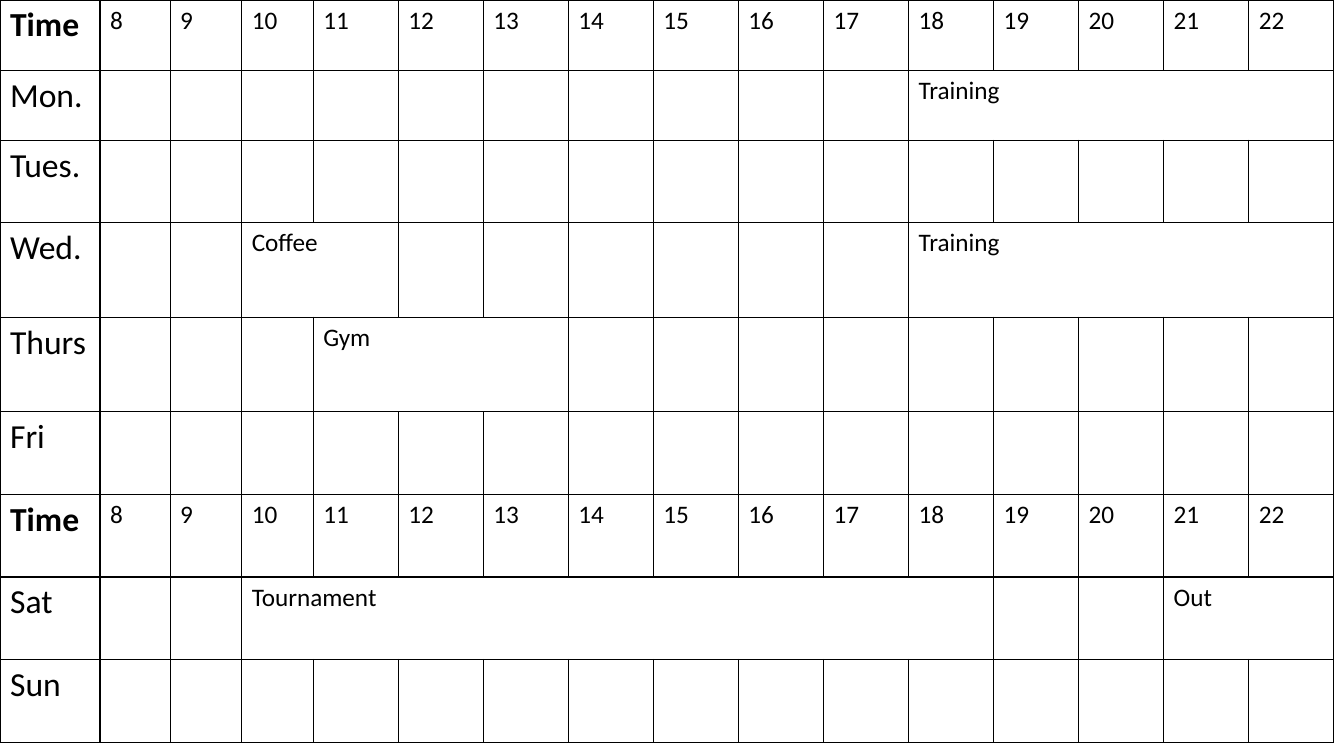
"""Build a weekly timetable slide with one row per day and one column per hour."""
from dataclasses import dataclass

from lxml import etree
from pptx import Presentation
from pptx import util as u
from pptx.dml import color
from pptx.oxml import ns

COLORS = {"ink": "000000", "paper": "FFFFFF"}
FONT = "Calibri"
LABEL_SIZE, ENTRY_SIZE = 24, 18
BORDER_WIDTH = 1
FIRST_HOUR, LAST_HOUR = 8, 22
COLUMN_WIDTHS = [71.4, 50.2, 51.1, 51.1] + [60.75] * 12


@dataclass(frozen=True)
class Activity:
    name: str
    start: int
    hours: int = 1


@dataclass(frozen=True)
class Row:
    label: str
    height: float
    activities: tuple[Activity, ...] = ()
    heading: bool = False


HOURS = tuple(Activity(str(hour), hour) for hour in range(FIRST_HOUR, LAST_HOUR + 1))
TRAINING = Activity("Training", 18, 5)
ROWS = [
    Row("Time", 50.1, HOURS, heading=True),
    Row("Mon.", 50.1, (TRAINING,)),
    Row("Tues.", 59),
    Row("Wed.", 67.5, (Activity("Coffee", 10, 2), TRAINING)),
    Row("Thurs", 67.5, (Activity("Gym", 11, 3),)),
    Row("Fri", 59),
    Row("Time", 59, HOURS, heading=True),
    Row("Sat", 59, (Activity("Tournament", 10, 9), Activity("Out", 21, 2))),
    Row("Sun", 59),
]


def style_cell(cell) -> None:
    properties = cell._tc.get_or_add_tcPr()
    for side in ("lnL", "lnR", "lnT", "lnB"):
        line = etree.SubElement(properties, ns.qn(f"a:{side}"), w=str(u.Pt(BORDER_WIDTH)))
        fill = etree.SubElement(line, ns.qn("a:solidFill"))
        etree.SubElement(fill, ns.qn("a:srgbClr"), val=COLORS["ink"])
    cell.fill.solid()
    cell.fill.fore_color.rgb = color.RGBColor.from_string(COLORS["paper"])


def write(cell, words: str, size: float, bold: bool = False) -> None:
    span = cell.text_frame.paragraphs[0].add_run()
    span.text = words
    span.font.name = FONT
    span.font.size = u.Pt(size)
    span.font.bold = bold
    span.font.color.rgb = color.RGBColor.from_string(COLORS["ink"])


def fill_row(table, index: int, row: Row) -> None:
    table.rows[index].height = u.Pt(row.height)
    for column in range(len(COLUMN_WIDTHS)):
        style_cell(table.cell(index, column))
    write(table.cell(index, 0), row.label, LABEL_SIZE, row.heading)
    for activity in row.activities:
        column = activity.start - FIRST_HOUR + 1
        cell = table.cell(index, column)
        if activity.hours > 1:
            cell.merge(table.cell(index, column + activity.hours - 1))
        write(cell, activity.name, ENTRY_SIZE)


def main() -> None:
    deck = Presentation()
    deck.slide_width, deck.slide_height = u.Pt(960), u.Pt(540)
    page = deck.slides.add_slide(deck.slide_layouts[6])
    frame = page.shapes.add_table(
        len(ROWS), len(COLUMN_WIDTHS), u.Pt(0), u.Pt(0),
        u.Pt(sum(COLUMN_WIDTHS)), u.Pt(sum(row.height for row in ROWS)))
    table = frame.table
    table.first_row = table.horz_banding = False
    for column, width in zip(table.columns, COLUMN_WIDTHS):
        column.width = u.Pt(width)
    for index, row in enumerate(ROWS):
        fill_row(table, index, row)
    deck.save("out.pptx")


if __name__ == "__main__":
    main()
